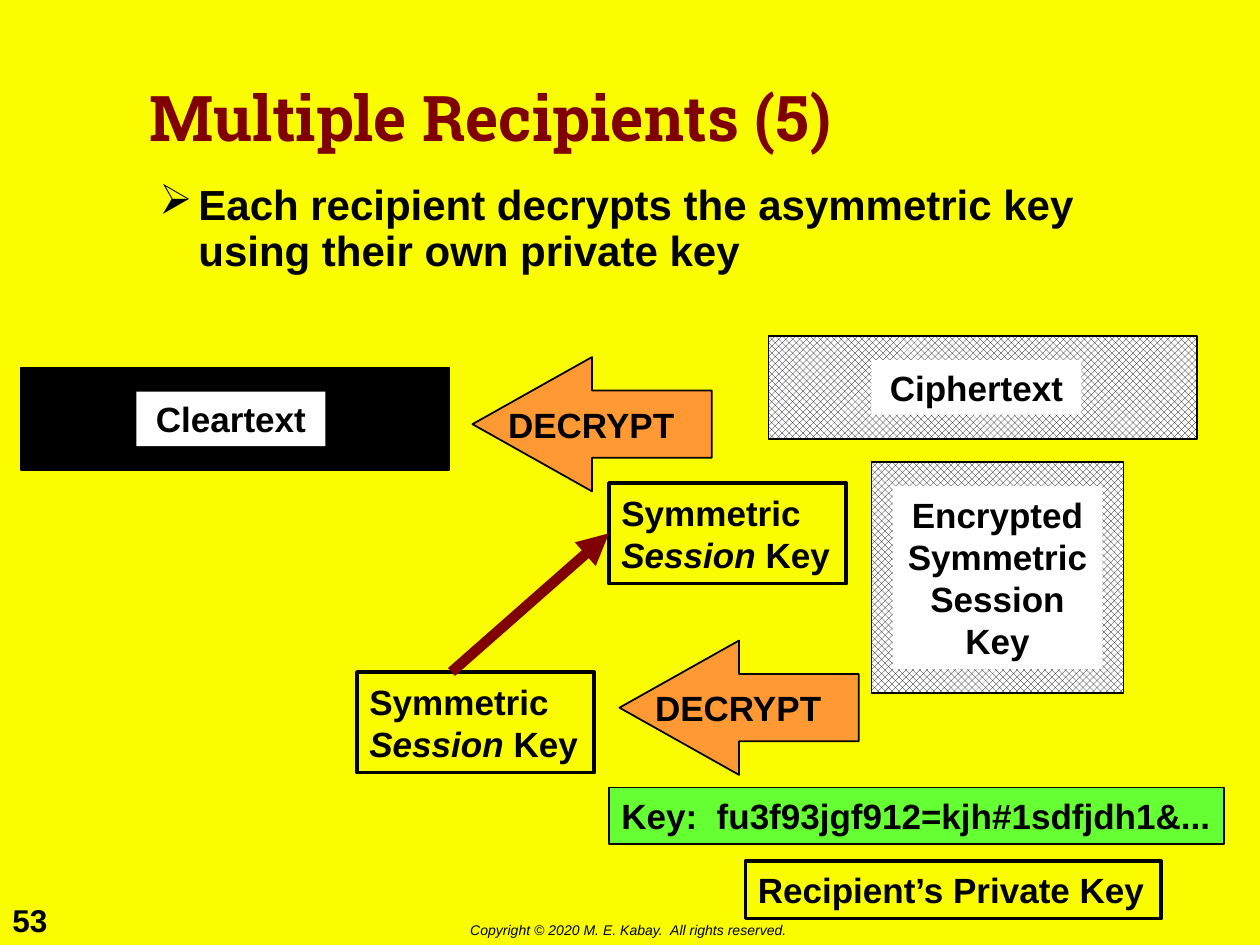
import pptx
import pptx.util
import pptx.dml.color
import pptx.enum.dml
import pptx.enum.shapes
import pptx.enum.text
import pptx.oxml
import pptx.oxml.ns

RGB = pptx.dml.color.RGBColor
SHAPE = pptx.enum.shapes.MSO_SHAPE
ALIGN = pptx.enum.text.PP_ALIGN
ANCHOR = pptx.enum.text.MSO_ANCHOR
Pt = pptx.util.Pt

YELLOW = RGB(0xFA, 0xFD, 0x00)
BLACK = RGB(0x00, 0x00, 0x00)
WHITE = RGB(0xFF, 0xFF, 0xFF)
MAROON = RGB(0x80, 0x00, 0x00)
ORANGE = RGB(0xFF, 0x99, 0x33)
GREEN = RGB(0x66, 0xFF, 0x33)

COLS, ROWS = 120, 90
CELL = pptx.util.Inches(10 / COLS)
SPACE = pptx.oxml.ns.nsdecls("a")


def grid(*cells):
    """Turn grid columns and rows into lengths."""
    return [round(cell * CELL) for cell in cells]


def style(font, size, color=BLACK, name="Arial", bold=True, slant=False):
    """Format one font."""
    font.size, font.name = Pt(size), name
    font.bold, font.italic = bold, slant
    font.color.rgb = color


def write(shape, text, size=20, align=ALIGN.LEFT, wrap=False, **look):
    """Put one formatted paragraph into a shape."""
    frame = shape.text_frame
    frame.word_wrap = wrap
    para = frame.paragraphs[0]
    para.text, para.alignment = text, align
    for run in para.runs:
        style(run.font, size, **look)
    return para


def note(slide, box, text, size=20, **look):
    """Add a text box."""
    return write(slide.shapes.add_textbox(*grid(*box)), text, size, **look)


def block(slide, box, fill=None, line=1, kind=SHAPE.RECTANGLE):
    """Add a flat shape with an optional fill and outline."""
    shape = slide.shapes.add_shape(kind, *grid(*box))
    shape.shadow.inherit = False
    if fill is None:
        shape.fill.background()
    else:
        shape.fill.solid()
        shape.fill.fore_color.rgb = fill
    if line:
        shape.line.color.rgb = BLACK
        shape.line.width = Pt(line)
    else:
        shape.line.fill.background()
    return shape


def panel(slide, box, text, inset, width, mesh=True):
    """Add a dark or meshed panel with a white label inside."""
    left, top, _, height = box
    fill = block(slide, box, BLACK).fill
    if mesh:
        fill.patterned()
        fill.pattern = pptx.enum.dml.MSO_PATTERN.OUTLINED_DIAMOND
        fill.fore_color.rgb, fill.back_color.rgb = BLACK, WHITE
    pad = 2.3
    label = block(slide, (left + inset, top + pad, width, height - 2 * pad), WHITE, 0)
    write(label, text, align=ALIGN.CENTER, wrap=True)


def arrow(slide, left, top):
    """Add a left arrow marked as a decryption step."""
    shape = block(slide, (left, top, 22.8, 12.8), ORANGE, kind=SHAPE.LEFT_ARROW)
    shape.adjustments[0], shape.adjustments[1] = 0.5, 0.89
    note(slide, (left + 2.2, top + 3.8, 18.4, 5.2), "DECRYPT")


def session(slide, left, top):
    """Add a framed session key."""
    shape = block(slide, (left, top, 22.6, 9.6), line=2)
    para = write(shape, "Symmetric\n")
    for text, slant in (("Session", True), (" Key", False)):
        run = para.add_run()
        run.text = text
        style(run.font, 20, slant=slant)
    return shape


def link(slide, start, goal):
    """Draw the thick arrow to the left side of the goal."""
    wire = slide.shapes.add_connector(
        pptx.enum.shapes.MSO_CONNECTOR.STRAIGHT, *grid(*start), *grid(*start))
    wire.end_connect(goal, 1)
    wire.line.color.rgb, wire.line.width = MAROON, Pt(6)
    props = wire.line._get_or_add_ln()
    props.append(pptx.oxml.parse_xml(f'<a:tailEnd {SPACE} type="triangle"/>'))
    props.getparent().append(pptx.oxml.parse_xml(f"<a:effectLst {SPACE}/>"))


def heading(slide, box):
    """Place the title."""
    title = slide.shapes.title
    title.left, title.top, title.width, title.height = grid(*box)
    title.text_frame.vertical_anchor = ANCHOR.MIDDLE
    para = write(title, "Multiple Recipients (5)", 36, wrap=True,
                 color=MAROON, name="Roboto Slab")
    para.line_spacing = 0.9


def point(slide, box):
    """Place the bulleted statement."""
    para = note(slide, box, "Each recipient decrypts the asymmetric key "
                "using their own private key", 24, wrap=True)
    props = para._p.get_or_add_pPr()
    indent = pptx.util.Inches(0.31)
    props.set("marL", str(indent))
    props.set("indent", str(-indent))
    for mark in (f'<a:buClr {SPACE}><a:srgbClr val="{BLACK}"/></a:buClr>',
                 f'<a:buChar {SPACE} char="➢"/>'):
        props.append(pptx.oxml.parse_xml(mark))
    para.line_spacing = 0.9


def diagram(slide):
    """Draw the decryption flow."""
    panel(slide, (2, 35, 40.8, 9.8), "Cleartext", 11, 18, mesh=False)
    panel(slide, (73.2, 32, 40.8, 9.8), "Ciphertext", 9.8, 20)
    panel(slide, (83, 44, 24, 22), "Encrypted\nSymmetric\nSession Key", 2, 20)
    session(slide, 34, 64)
    goal = session(slide, 58, 46)
    arrow(slide, 45, 34)
    link(slide, (43, 64), goal)
    arrow(slide, 59, 61)
    write(block(slide, (58, 75, 58.6, 5.4), GREEN), "Key:  fu3f93jgf912=kjh#1sdfjdh1&...")
    write(block(slide, (71, 82, 39.6, 5.5), line=2), "Recipient’s Private Key")


def footer(slide):
    """Add the slide number and the copyright line."""
    note(slide, (0, 85.2, 6, 4.8), "53", 18)
    note(slide, (43.6, 87.2, 32.8, 2.8),
         "Copyright © 2020 M. E. Kabay.  All rights reserved.", 8, bold=False, slant=True)


def main():
    """Build and save the slide."""
    deck = pptx.Presentation()
    deck.slide_width, deck.slide_height = grid(COLS, ROWS)
    slide = deck.slides.add_slide(deck.slide_layouts[5])
    slide.background.fill.solid()
    slide.background.fill.fore_color.rgb = YELLOW
    footer(slide)
    heading(slide, (13, 6, 94, 11))
    point(slide, (14, 17, 94, 12))
    diagram(slide)
    deck.save("out.pptx")


if __name__ == "__main__":
    main()
